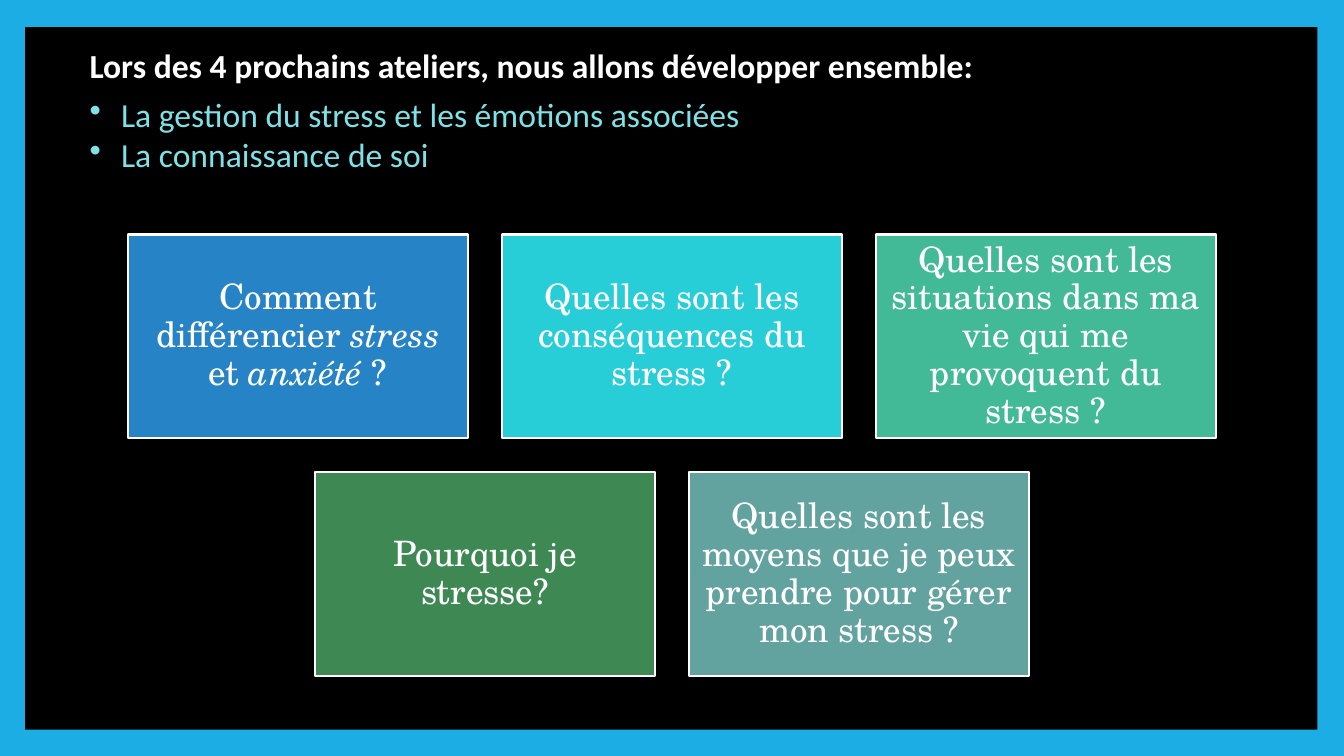
from dataclasses import dataclass

from lxml import etree
from pptx import Presentation
from pptx.dml.color import RGBColor
from pptx.enum.shapes import MSO_SHAPE
from pptx.enum.text import MSO_ANCHOR, MSO_AUTO_SIZE, PP_ALIGN
from pptx.oxml.ns import qn
from pptx.util import Pt

RECTANGLE = MSO_SHAPE.RECTANGLE
MIDDLE = MSO_ANCHOR.MIDDLE
CENTER = PP_ALIGN.CENTER
GROW = MSO_AUTO_SIZE.SHAPE_TO_FIT_TEXT


@dataclass(frozen=True)
class Theme:
    frame: str = "1CADE4"
    panel: str = "000000"
    white: str = "FFFFFF"
    topic: str = "7DE2E7"
    heading_font: str = "Calibri"
    card_font: str = "TeX Gyre Schola"
    heading_size: float = 24
    card_size: float = 25
    border: float = 1.5


SLIDE_WIDTH, SLIDE_HEIGHT = 960, 540
CARD_WIDTH, CARD_HEIGHT = 242.7, 145.6
CARD_GAP = 24.3
CARDS_TOP = 167.5
CARD_INSET = 7.2
BULLET_INDENT = 22.5

HEADING = "Lors des 4 prochains ateliers, nous allons développer ensemble:"
TOPICS = ["La gestion du stress et les émotions associées", "La connaissance de soi"]
CARD_ROWS = [
    [
        ("2683C6", [("Comment différencier ", False), ("stress", True),
                    (" et", False), (" anxiété", True), (" ?", False)]),
        ("27CED7", [("Quelles sont les conséquences du stress ?", False)]),
        ("42BA97", [("Quelles sont les situations dans ma vie qui me provoquent du stress ?", False)]),
    ],
    [
        ("3E8853", [("Pourquoi je stresse?", False)]),
        ("62A39F", [("Quelles sont les moyens que je peux prendre pour gérer mon stress ?", False)]),
    ],
]


def apply(target, values):
    """Set each named attribute of the target."""
    for name, value in values.items():
        setattr(target, name, value)


class SlideBuilder:
    """Draws styled elements on the current slide."""

    def __init__(self, slide, theme):
        self.slide = slide
        self.theme = theme

    def background(self, color):
        """Fill the slide background."""
        fill = self.slide.background.fill
        fill.solid()
        fill.fore_color.rgb = RGBColor.from_string(color)

    def rectangle(self, left, top, width, height, color):
        """Add a flat rectangle without an outline."""
        box = self.slide.shapes.add_shape(RECTANGLE, Pt(left), Pt(top), Pt(width), Pt(height))
        box.shadow.inherit = False
        box.fill.solid()
        box.fill.fore_color.rgb = RGBColor.from_string(color)
        box.line.fill.background()
        return box

    def span(self, para, text, color, **font_values):
        """Add a formatted run to a paragraph."""
        span = para.add_run()
        span.text = text
        apply(span.font, font_values)
        span.font.color.rgb = RGBColor.from_string(color)

    def card(self, left, top, color, spans):
        """Add an outlined question card with centred text."""
        box = self.rectangle(left, top, CARD_WIDTH, CARD_HEIGHT, color)
        box.line.color.rgb = RGBColor.from_string(self.theme.white)
        box.line.width = Pt(self.theme.border)
        inset = Pt(CARD_INSET)
        apply(box.text_frame, {
            "word_wrap": True, "vertical_anchor": MIDDLE, "margin_left": inset,
            "margin_right": inset, "margin_top": inset, "margin_bottom": inset,
        })
        para = box.text_frame.paragraphs[0]
        apply(para, {"alignment": CENTER, "line_spacing": 0.9})
        for text, italic in spans:
            self.span(para, text, self.theme.white, name=self.theme.card_font,
                      size=Pt(self.theme.card_size), italic=italic)

    def bullet(self, para):
        """Give a paragraph a hanging bullet."""
        properties = para._p.get_or_add_pPr()
        properties.set("marL", str(Pt(BULLET_INDENT)))
        properties.set("indent", str(-Pt(BULLET_INDENT)))
        etree.SubElement(properties, qn("a:buChar")).set("char", "•")

    def introduction(self, left, top, width, height, heading, topics):
        """Add the heading with its bulleted topics."""
        box = self.slide.shapes.add_textbox(Pt(left), Pt(top), Pt(width), Pt(height))
        apply(box.text_frame, {"word_wrap": True, "auto_size": GROW})
        font_values = {"name": self.theme.heading_font, "size": Pt(self.theme.heading_size)}
        para = box.text_frame.paragraphs[0]
        para.space_after = Pt(6)
        self.span(para, heading, self.theme.white, bold=True, **font_values)
        for topic in topics:
            para = box.text_frame.add_paragraph()
            self.bullet(para)
            self.span(para, topic, self.theme.topic, bold=False, **font_values)


def main():
    """Build and save the workshop slide."""
    deck = Presentation()
    apply(deck, {"slide_width": Pt(SLIDE_WIDTH), "slide_height": Pt(SLIDE_HEIGHT)})
    theme = Theme()
    page = SlideBuilder(deck.slides.add_slide(deck.slide_layouts[6]), theme)
    page.background(theme.frame)
    page.rectangle(18, 19.4, 923, 501.8, theme.panel)
    for row, cards in enumerate(CARD_ROWS):
        row_width = len(cards) * (CARD_WIDTH + CARD_GAP) - CARD_GAP
        row_left = (SLIDE_WIDTH - row_width) / 2
        top = CARDS_TOP + row * (CARD_HEIGHT + CARD_GAP)
        for column, (color, spans) in enumerate(cards):
            page.card(row_left + column * (CARD_WIDTH + CARD_GAP), top, color, spans)
    page.introduction(56.9, 28.8, 731.5, 100.8, HEADING, TOPICS)
    deck.save("out.pptx")


if __name__ == "__main__":
    main()
